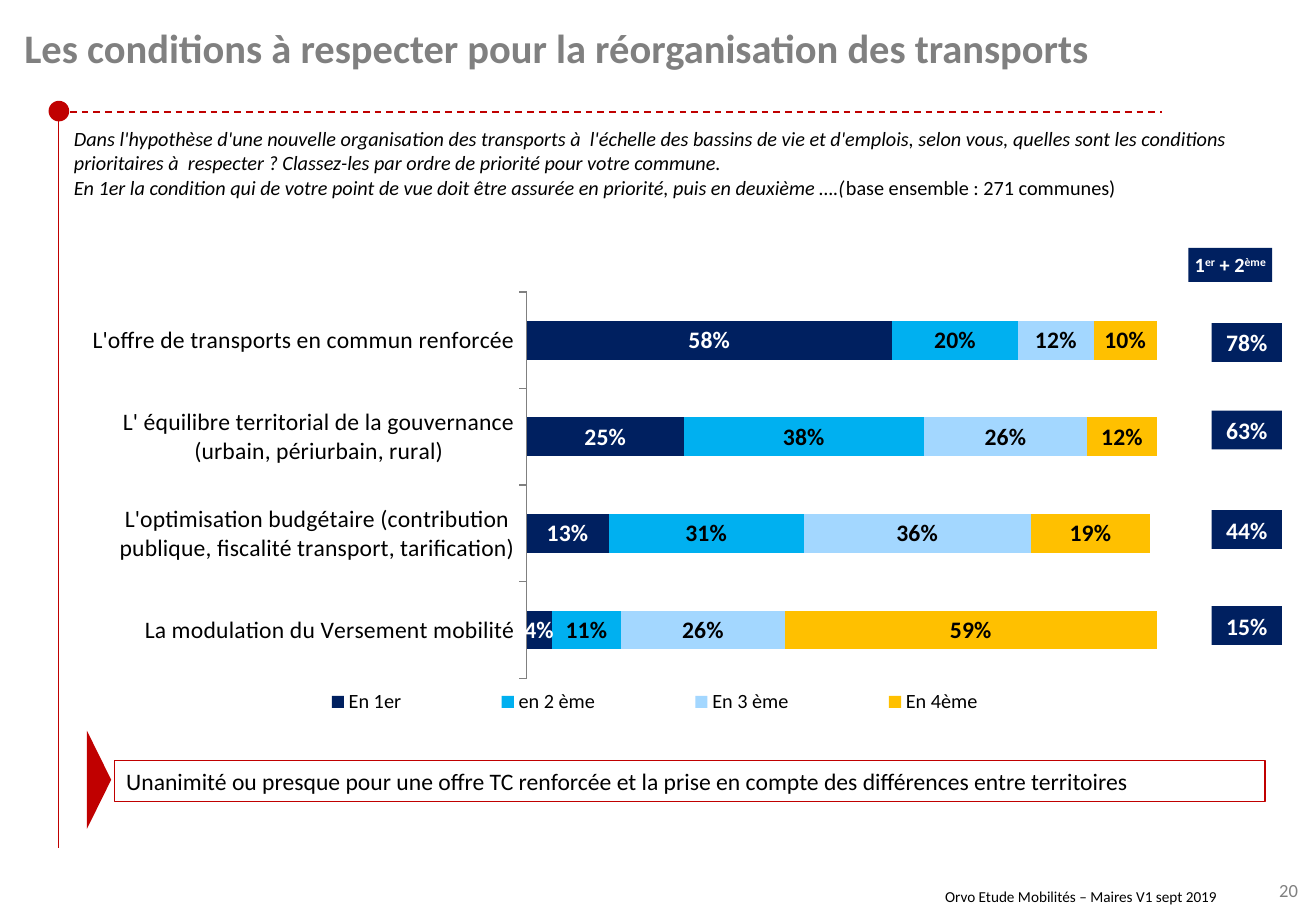
from dataclasses import dataclass, field

from lxml import etree
from pptx import Presentation
from pptx.chart.data import CategoryChartData
from pptx.dml.color import RGBColor
from pptx.enum.chart import (XL_CHART_TYPE, XL_LABEL_POSITION,
                             XL_LEGEND_POSITION, XL_TICK_MARK)
from pptx.enum.dml import MSO_LINE
from pptx.enum.shapes import MSO_CONNECTOR, MSO_SHAPE
from pptx.enum.text import MSO_ANCHOR, MSO_AUTO_SIZE, PP_ALIGN
from pptx.oxml.ns import qn
from pptx.util import Inches, Pt

RED = RGBColor(0xC0, 0x00, 0x00)
NAVY = RGBColor(0x00, 0x20, 0x60)
BLUE = RGBColor(0x00, 0xB0, 0xF0)
PALE = RGBColor(0xA3, 0xD7, 0xFF)
GOLD = RGBColor(0xFF, 0xC0, 0x00)
GREY = RGBColor(0x80, 0x80, 0x80)
BLACK = RGBColor(0x00, 0x00, 0x00)
WHITE = RGBColor(0xFF, 0xFF, 0xFF)

LEFT, RIGHT = PP_ALIGN.LEFT, PP_ALIGN.RIGHT
CENTER, JUSTIFY = PP_ALIGN.CENTER, PP_ALIGN.JUSTIFY
TOP, MIDDLE = MSO_ANCHOR.TOP, MSO_ANCHOR.MIDDLE
RECT, OVAL = MSO_SHAPE.RECTANGLE, MSO_SHAPE.OVAL
TRIANGLE = MSO_SHAPE.ISOSCELES_TRIANGLE

Box = tuple[float, float, float, float]


@dataclass
class Run:
    text: str
    fmt: dict = field(default_factory=dict)
    raised: bool = False


@dataclass
class Series:
    name: str
    vals: tuple
    color: RGBColor
    ink: RGBColor = BLACK


@dataclass
class Badge:
    box: Box
    size: int
    runs: list[Run]


def style(font, size: float, color: RGBColor = BLACK, **more) -> None:
    for key, val in {"name": "Calibri", "size": Pt(size), **more}.items():
        setattr(font, key, val)
    font.color.rgb = color


def write(frame, paras: list[list[Run]], fmt: dict, align=LEFT, anchor=TOP,
          pad: tuple = (0.1, 0.05)) -> None:
    side, edge = map(Inches, pad)
    props = {"word_wrap": True, "auto_size": MSO_AUTO_SIZE.NONE,
             "vertical_anchor": anchor, "margin_left": side,
             "margin_right": side, "margin_top": edge, "margin_bottom": edge}
    for key, val in props.items():
        setattr(frame, key, val)
    for i, runs in enumerate(paras):
        para = frame.add_paragraph() if i else frame.paragraphs[0]
        para.alignment = align
        for item in runs:
            run = para.add_run()
            run.text = item.text
            style(run.font, **{**fmt, **item.fmt})
            if item.raised:
                run._r.get_or_add_rPr().set("baseline", "30000")


def add_text(slide, box: Box, paras: list[list[Run]], fmt: dict, **more) -> None:
    area = slide.shapes.add_textbox(*map(Inches, box))
    write(area.text_frame, paras, fmt, **more)


def add_form(slide, kind, box: Box, fill=None, line=None):
    form = slide.shapes.add_shape(kind, *map(Inches, box))
    form.shadow.inherit = False
    if fill is None:
        form.fill.background()
    else:
        form.fill.solid()
        form.fill.fore_color.rgb = fill
    if line is None:
        form.line.fill.background()
    else:
        form.line.color.rgb = line
        form.line.width = Pt(0.75)
    return form


def add_line(slide, ends: Box, width: float, dash=None) -> None:
    line = slide.shapes.add_connector(MSO_CONNECTOR.STRAIGHT, *map(Inches, ends))
    line.line.color.rgb = RED
    line.line.width = Pt(width)
    if dash is not None:
        line.line.dash_style = dash
    etree.SubElement(line._element.spPr, qn("a:effectLst"))


def make_layout(box: Box, inner: bool = False):
    layout = etree.Element(qn("c:layout"))
    manual = etree.SubElement(layout, qn("c:manualLayout"))
    parts = [("layoutTarget", "inner")] if inner else []
    parts += [("xMode", "edge"), ("yMode", "edge"), *zip("xywh", box)]
    for tag, val in parts:
        etree.SubElement(manual, qn(f"c:{tag}")).set("val", str(val))
    return layout


def add_bars(slide, box: Box, cats: list[str], rows: list[Series]) -> None:
    data = CategoryChartData(number_format="0%")
    data.categories = cats
    for row in rows:
        data.add_series(row.name, row.vals)
    chart = slide.shapes.add_chart(
        XL_CHART_TYPE.BAR_STACKED, *map(Inches, box), data).chart
    style(chart.font, 18)
    chart.has_title = False
    plot = chart.plots[0]
    plot.gap_width, plot.overlap, plot.vary_by_categories = 150, 100, False
    for row, bar in zip(rows, plot.series):
        bar.format.fill.solid()
        bar.format.fill.fore_color.rgb = row.color
        tags = bar.data_labels
        for key, val in {"show_value": True, "number_format": "0%",
                         "number_format_is_linked": False,
                         "position": XL_LABEL_POSITION.CENTER}.items():
            setattr(tags, key, val)
        style(tags.font, 14, row.ink, bold=True)

    # Axes
    axis, scale = chart.category_axis, chart.value_axis
    axis.major_tick_mark = XL_TICK_MARK.OUTSIDE
    axis.format.line.color.rgb = GREY
    axis.format.line.width = Pt(0.75)
    style(axis.tick_labels.font, 14)
    scale.minimum_scale, scale.maximum_scale = 0, 1
    scale.has_major_gridlines = False
    scale.visible = False

    # Plot and legend places
    chart.has_legend = True
    key = chart.legend
    key.position = XL_LEGEND_POSITION.RIGHT
    key.include_in_layout = False
    style(key.font, 12)
    area = chart._chartSpace.chart.plotArea
    for host in (area, key._element):
        for old in host.findall(qn("c:layout")):
            host.remove(old)
    area.insert(0, make_layout((0.41, 0.05, 0.59, 0.82), True))
    key._element.find(qn("c:overlay")).addprevious(
        make_layout((0.14, 0.88, 0.78, 0.08)))


CATS = [
    "La modulation du Versement mobilité",
    "L'optimisation budgétaire (contribution publique, fiscalité transport, tarification)",
    "L' équilibre territorial de la gouvernance (urbain, périurbain, rural)",
    "L'offre de transports en commun renforcée",
]
ROWS = [
    Series("En 1er", (0.04, 0.13, 0.25, 0.58), NAVY, WHITE),
    Series("en 2 ème", (0.11, 0.31, 0.38, 0.2), BLUE),
    Series("En 3 ème", (0.26, 0.36, 0.26, 0.12), PALE),
    Series("En 4ème", (0.59, 0.19, 0.12, 0.1), GOLD),
]
SUMS = {"78%": 2.66, "63%": 3.38, "44%": 4.2, "15%": 4.99}
BADGES = [Badge((9.78, 2.04, 0.69, 0.28), 12, [
    Run("1"), Run("er", raised=True), Run(" + 2"), Run("ème", raised=True)])]
BADGES += [Badge((9.97, top, 0.58, 0.32), 14, [Run(text)])
           for text, top in SUMS.items()]
ASK = [
    [Run("Dans l'hypothèse d'une nouvelle organisation des transports à  l'échelle "
         "des bassins de vie et d'emplois, selon vous, quelles sont les conditions "
         "prioritaires à  respecter ? Classez-les par ordre de priorité pour votre "
         "commune.")],
    [Run("En 1er la condition qui de votre point de vue doit être assurée en "
         "priorité, puis en deuxième ….("),
     Run("base ensemble : 271 communes)", {"italic": False})],
]


def main() -> None:
    deck = Presentation()
    deck.slide_width, deck.slide_height = Inches(10.83), Inches(7.5)
    slide = deck.slides.add_slide(deck.slide_layouts[5])

    # Frame lines and page number
    add_line(slide, (0.48, 0.92, 9.56, 0.92), 1, MSO_LINE.DASH)
    add_line(slide, (0.48, 6.98, 0.48, 1), 0.75)
    add_form(slide, OVAL, (0.4, 0.83, 0.17, 0.17), RED)
    add_text(slide, (10.39, 7.24, 0.43, 0.2), [[Run("20")]],
             {"size": 11, "color": GREY}, align=CENTER, pad=(0, 0))

    # Title and question
    title = slide.shapes.title
    title.left, title.top, title.width, title.height = map(
        Inches, (0.2, 0.2, 10.47, 0.71))
    write(title.text_frame,
          [[Run("Les conditions à respecter pour la réorganisation des transports")]],
          {"size": 24, "color": GREY, "bold": True}, pad=(0, 0))
    title.text_frame.paragraphs[0].line_spacing = Pt(28)
    add_text(slide, (0.51, 0.99, 10.32, 0.71), ASK, {"size": 12, "italic": True})

    # Chart and sums
    add_bars(slide, (0.73, 2.21, 8.79, 3.88), CATS, ROWS)
    for badge in BADGES:
        form = add_form(slide, RECT, badge.box, NAVY)
        write(form.text_frame, [badge.runs],
              {"size": badge.size, "color": WHITE, "bold": True},
              align=CENTER, anchor=MIDDLE, pad=(0, 0.04))

    # Key message and footer
    add_form(slide, TRIANGLE, (0.41, 6.32, 0.81, 0.2), RED).rotation = 90
    note = add_form(slide, RECT, (0.94, 6.26, 9.47, 0.34), line=RED)
    write(note.text_frame,
          [[Run("Unanimité ou presque pour une offre TC renforcée et la prise en "
                "compte des différences entre territoires")]],
          {"size": 14}, align=JUSTIFY, anchor=MIDDLE)
    add_text(slide, (6.84, 7.26, 3.27, 0.24),
             [[Run("Orvo Etude Mobilités – Maires V1 sept 2019")]],
             {"size": 9}, align=RIGHT)

    deck.save("out.pptx")


if __name__ == "__main__":
    main()
